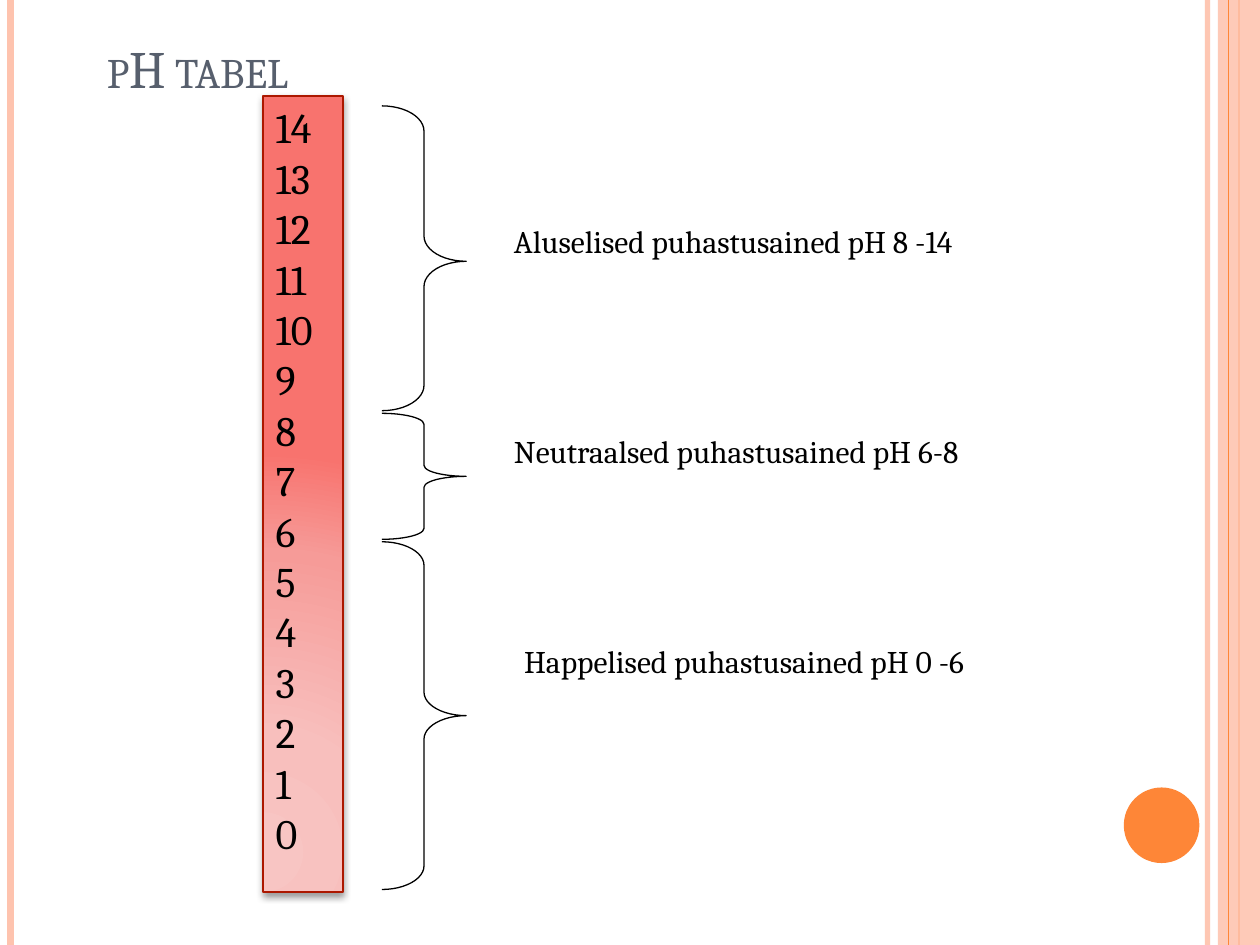
from lxml import etree
from pptx import Presentation
from pptx.dml.color import RGBColor
from pptx.enum.shapes import MSO_CONNECTOR, MSO_SHAPE
from pptx.enum.text import MSO_ANCHOR, PP_ALIGN
from pptx.oxml import parse_xml
from pptx.oxml.ns import nsdecls, qn
from pptx.util import Pt

STRAIGHT = MSO_CONNECTOR.STRAIGHT
RECTANGLE = MSO_SHAPE.RECTANGLE
OVAL = MSO_SHAPE.OVAL
RIGHT_BRACE = MSO_SHAPE.RIGHT_BRACE
TOP = MSO_ANCHOR.TOP
BOTTOM = MSO_ANCHOR.BOTTOM
LEFT = PP_ALIGN.LEFT

BLACK = RGBColor(0x00, 0x00, 0x00)
PEACH = RGBColor(0xFE, 0xC3, 0xAE)
ORANGE = RGBColor(0xFE, 0x86, 0x37)
SLATE = RGBColor(0x57, 0x5F, 0x6D)
DARK_RED = RGBColor(0xAC, 0x18, 0x00)
SCALE_STOPS = [
    (0, RGBColor(0xF8, 0xC5, 0xC3)),
    (30, RGBColor(0xF8, 0xBF, 0xBD)),
    (75, RGBColor(0xF6, 0x9B, 0x98)),
    (100, RGBColor(0xF8, 0x73, 0x6E)),
]
FONT = "Cambria"
WIDTH, HEIGHT = 720, 540


def set_alpha(element, percent):
    color = element.find(".//" + qn("a:srgbClr"))
    etree.SubElement(color, qn("a:alpha")).set("val", str(percent * 1000))


def add_shape(slide, kind, box, fill=None, line=None, line_width=0.75):
    shape = slide.shapes.add_shape(kind, *map(Pt, box))
    shape.shadow.inherit = False
    if fill is None:
        shape.fill.background()
    else:
        shape.fill.solid()
        shape.fill.fore_color.rgb = fill
    if line is None:
        shape.line.fill.background()
    else:
        shape.line.color.rgb = line
        shape.line.width = Pt(line_width)
    return shape


def write_text(shape, text, size=18, color=BLACK, anchor=TOP, small_caps=False):
    frame = shape.text_frame
    frame.word_wrap = True
    frame.vertical_anchor = anchor
    frame.text = text
    for paragraph in frame.paragraphs:
        paragraph.alignment = LEFT
        for run in paragraph.runs:
            run.font.name = FONT
            run.font.size = Pt(size)
            run.font.color.rgb = color
            if small_caps:
                run.font._element.set("cap", "small")


def add_text_box(slide, box, text, **text_format):
    write_text(slide.shapes.add_textbox(*map(Pt, box)), text, **text_format)


def add_vertical_line(slide, x, color, width, alpha=None):
    line = slide.shapes.add_connector(STRAIGHT, Pt(x), Pt(0), Pt(x), Pt(HEIGHT))
    line.line.color.rgb = color
    line.line.width = Pt(width)
    properties = line._element.spPr
    if alpha:
        set_alpha(properties, alpha)
    etree.SubElement(properties, qn("a:effectLst"))


def add_frame(slide, box):
    left, top, width, height = box
    right = left + width
    add_vertical_line(slide, right - 30, PEACH, 3, alpha=93)
    add_vertical_line(slide, left + 6, PEACH, 4.5)
    add_vertical_line(slide, right - 12, ORANGE, 1.5)
    band = add_shape(slide, RECTANGLE, (right - 24, top, 24, height), fill=PEACH)
    set_alpha(band._element.spPr, 87)
    add_vertical_line(slide, right - 18, ORANGE, 0.75)
    add_shape(slide, OVAL, (right - 77.8, top + height - 90, 43.2, 43.2), fill=ORANGE)


def add_scale(slide, box):
    scale = add_shape(slide, RECTANGLE, box, line=DARK_RED, line_width=1)
    properties = scale._element.spPr
    stops = "".join(
        f'<a:gs pos="{position * 1000}"><a:srgbClr val="{color}"/></a:gs>'
        for position, color in SCALE_STOPS
    )
    gradient = parse_xml(
        f'<a:gradFill {nsdecls("a")} rotWithShape="1"><a:gsLst>{stops}</a:gsLst>'
        '<a:path path="circle"><a:fillToRect l="5000" t="100000" r="120000" b="10000"/>'
        "</a:path></a:gradFill>"
    )
    properties.replace(properties.find(qn("a:noFill")), gradient)
    shadow = parse_xml(
        f'<a:outerShdw {nsdecls("a")} blurRad="{Pt(4)}" dist="{Pt(2)}" dir="5400000" '
        'rotWithShape="0"><a:srgbClr val="000000"><a:alpha val="40000"/></a:srgbClr>'
        "</a:outerShdw>"
    )
    properties.find(qn("a:effectLst")).append(shadow)
    write_text(scale, "\n".join(str(value) for value in range(14, -1, -1)), size=24)


def add_range(slide, box, curve, middle, label, label_box):
    brace = add_shape(slide, RIGHT_BRACE, box, line=BLACK)
    brace.adjustments[0] = curve
    brace.adjustments[1] = middle
    add_text_box(slide, label_box, label)


def add_ranges(slide, box):
    left, top, width, height = box
    ranges = [
        (0, 174.2, 0.3, 0.51, "Aluselised puhastusained pH 8 -14", 68.4),
        (175.7, 72, 0.13, 0.5, "Neutraalsed puhastusained pH 6-8", 68.4),
        (249.1, 198.7, 0.28, 0.5, "Happelised puhastusained pH 0 -6", 74.2),
    ]
    for index, (offset, length, curve, middle, label, indent) in enumerate(ranges):
        brace_box = (left, top + offset, 48.2, length)
        label_box = (left + indent, top + 62.6 + 120 * index, width - indent, 29)
        add_range(slide, brace_box, curve, middle, label, label_box)


def main():
    presentation = Presentation()
    presentation.slide_width = Pt(WIDTH)
    presentation.slide_height = Pt(HEIGHT)
    slide = presentation.slides.add_slide(presentation.slide_layouts[6])
    add_frame(slide, (0, 0, WIDTH, HEIGHT))
    add_text_box(slide, (54, 0, 612, 60), "pH tabel", size=30, color=SLATE,
                 anchor=BOTTOM, small_caps=True)
    add_ranges(slide, (218.2, 60.5, 437, 447.8))
    add_scale(slide, (150.5, 54.7, 45.4, 455))
    presentation.save("out.pptx")


if __name__ == "__main__":
    main()
